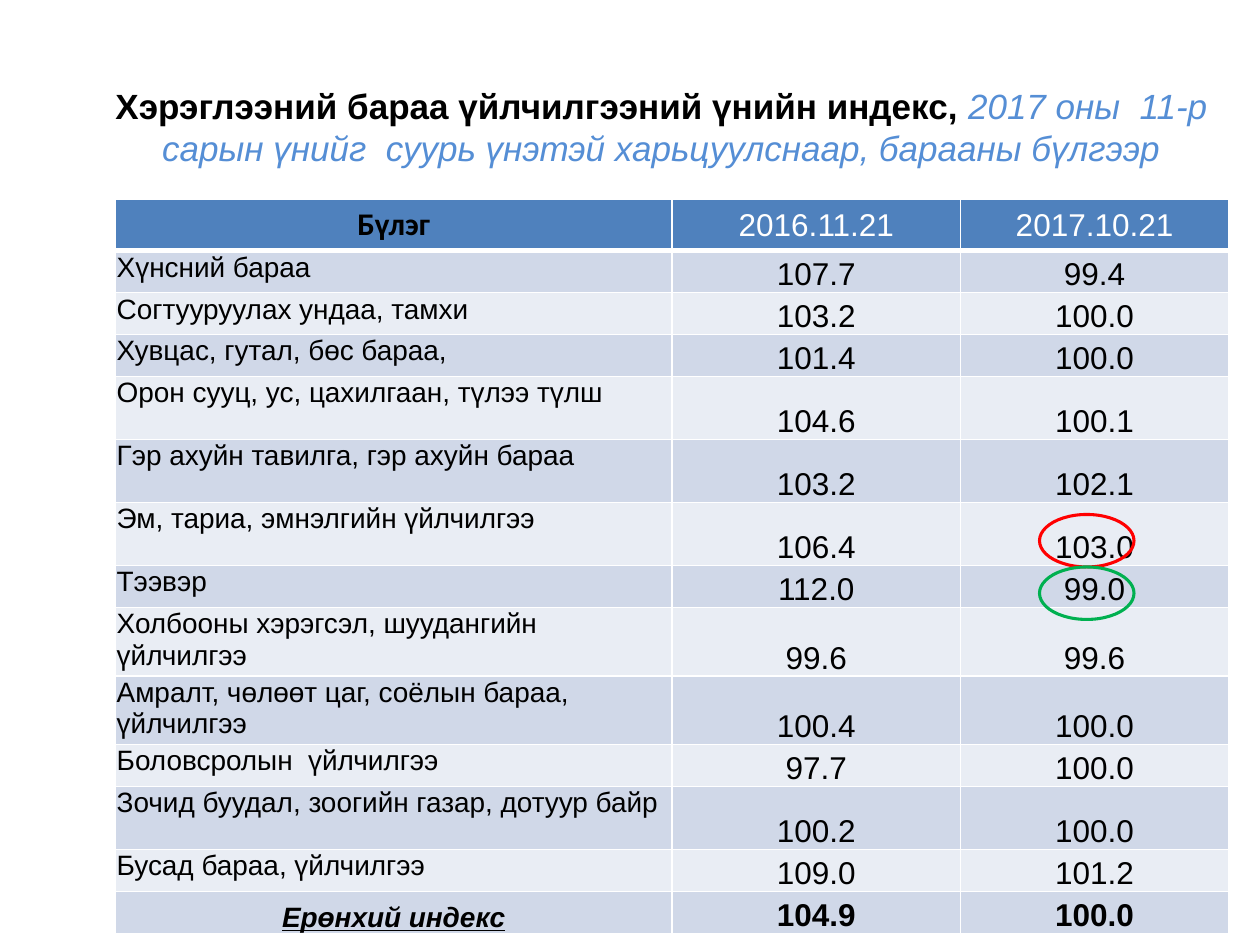
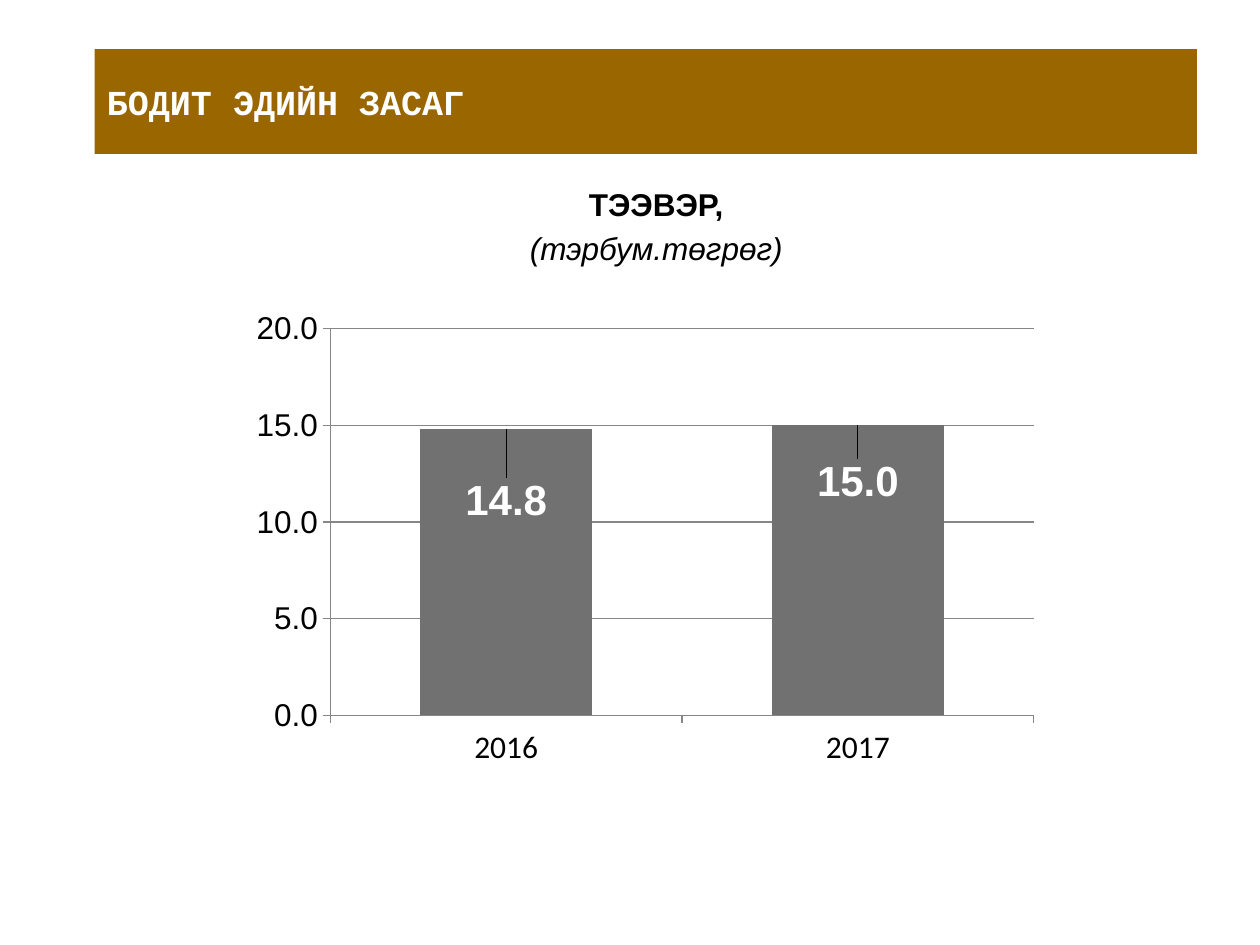
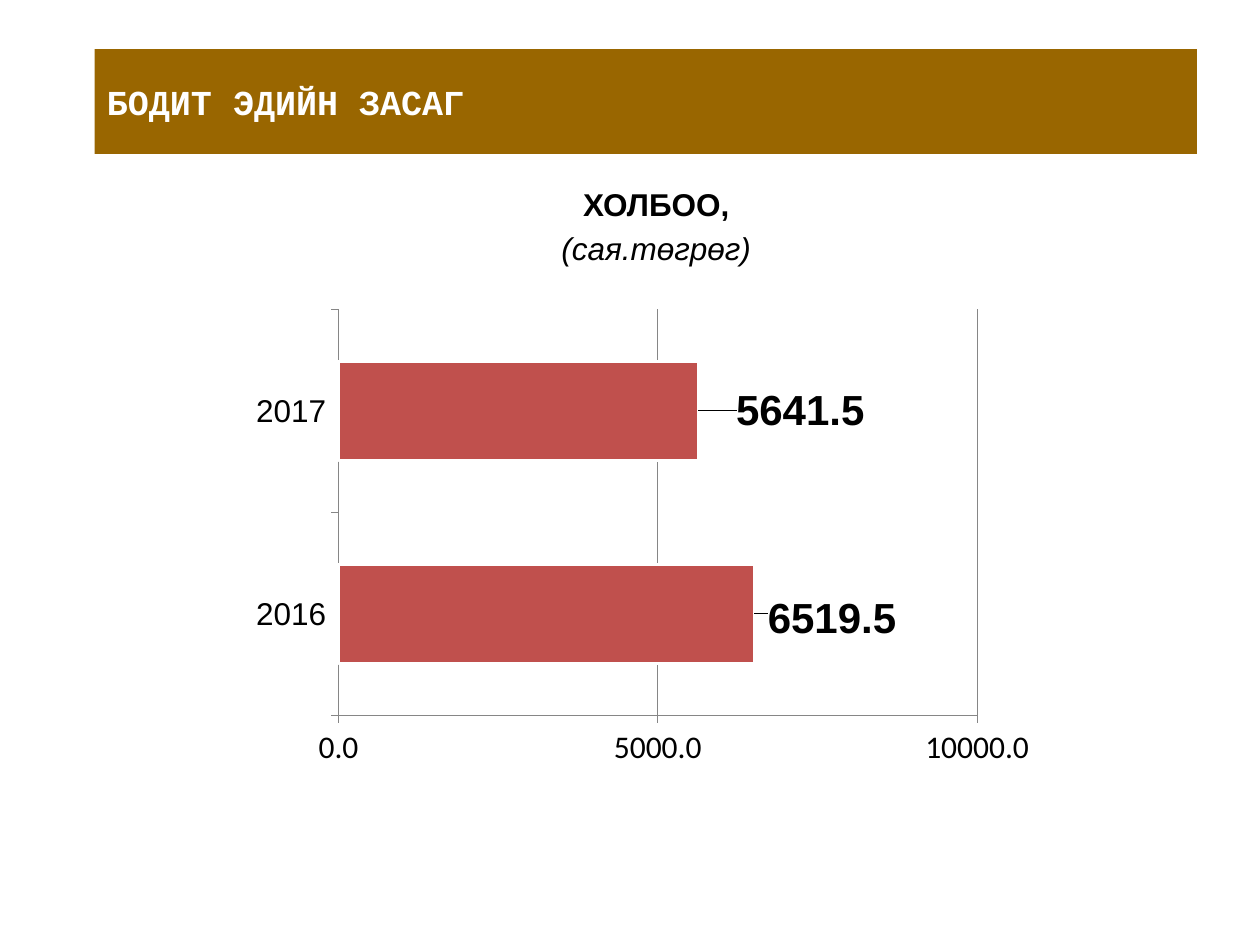
import pptx
import pptx.chart.data
import pptx.dml.color
import pptx.enum.chart
import pptx.enum.shapes
import pptx.enum.text
import pptx.oxml
import pptx.oxml.ns
import pptx.util

Pt = pptx.util.Pt
ALIGN = pptx.enum.text.PP_ALIGN
ANCHOR = pptx.enum.text.MSO_ANCHOR
SHAPE = pptx.enum.shapes.MSO_SHAPE
CHART = pptx.enum.chart.XL_CHART_TYPE
LABEL = pptx.enum.chart.XL_LABEL_POSITION
TICK = pptx.enum.chart.XL_TICK_MARK

BLACK, WHITE = "000000", "FFFFFF"
BAND, ACCENT, AXIS = "996600", "558ED5", "868686"
HEADER, STRIPES = "4F81BD", ("D0D8E8", "E9EDF4")
COLUMN_FILL, BAR_FILL = "717171", "C0504D"
SHORT, TALL = 24, 36

INDEX_HEADER = ("Бүлэг", "2016.11.21", "2017.10.21")
INDEX_ROWS = [
    ("Хүнсний бараа", "107.7", "99.4", SHORT),
    ("Согтууруулах ундаа, тамхи", "103.2", "100.0", SHORT),
    ("Хувцас, гутал, бөс бараа,", "101.4", "100.0", SHORT),
    ("Орон сууц, ус, цахилгаан, түлээ түлш", "104.6", "100.1", TALL),
    ("Гэр ахуйн тавилга, гэр ахуйн бараа", "103.2", "102.1", TALL),
    ("Эм, тариа, эмнэлгийн үйлчилгээ", "106.4", "103.0", TALL),
    ("Тээвэр", "112.0", "99.0", SHORT),
    ("Холбооны хэрэгсэл, шуудангийн үйлчилгээ", "99.6", "99.6", TALL),
    ("Амралт, чөлөөт цаг, соёлын бараа, үйлчилгээ", "100.4", "100.0", TALL),
    ("Боловсролын  үйлчилгээ", "97.7", "100.0", SHORT),
    ("Зочид буудал, зоогийн газар, дотуур байр", "100.2", "100.0", TALL),
    ("Бусад бараа, үйлчилгээ", "109.0", "101.2", SHORT),
    ("Ерөнхий индекс", "104.9", "100.0", SHORT),
]


def color(value):
    return pptx.dml.color.RGBColor.from_string(value)


def paint(fill, value):
    fill.solid()
    fill.fore_color.rgb = color(value)


def parse(xml, prefix):
    tag, rest = xml.split(" ", 1)
    return pptx.oxml.parse_xml(f"{tag} {pptx.oxml.ns.nsdecls(prefix)} {rest}")


def style_font(font, size=18, name="Arial", ink=BLACK, bold=False, italic=False, underline=False):
    font.size = Pt(size)
    font.name = name
    font.color.rgb = color(ink)
    font.bold, font.italic, font.underline = bold, italic, underline


def add_text(paragraph, text, align=ALIGN.CENTER, **style):
    paragraph.alignment = align
    run = paragraph.add_run()
    run.text = text
    style_font(run.font, **style)


def add_text_box(slide, left, top, width, height, anchor=ANCHOR.TOP):
    frame = slide.shapes.add_textbox(Pt(left), Pt(top), Pt(width), Pt(height)).text_frame
    frame.word_wrap = True
    frame.vertical_anchor = anchor
    return frame


def add_shape(slide, kind, left, top, width, height):
    shape = slide.shapes.add_shape(kind, Pt(left), Pt(top), Pt(width), Pt(height))
    shape.shadow.inherit = False
    return shape


def add_ring(slide, top, line):
    ring = add_shape(slide, SHAPE.OVAL, 594, top, 54, 30)
    ring.fill.background()
    ring.line.color.rgb = color(line)
    ring.line.width = Pt(1.75)


def add_band(slide, text):
    band = add_shape(slide, SHAPE.RECTANGLE, 54, 28, 630, 60)
    paint(band.fill, BAND)
    band.line.fill.background()
    band.text_frame.vertical_anchor = ANCHOR.MIDDLE
    add_text(band.text_frame.paragraphs[0], text, ALIGN.LEFT,
             size=20, name="Courier New", ink=WHITE, bold=True)


def add_borders(cell, bottom):
    properties = cell._tc.get_or_add_tcPr()
    for side, width in zip("LRTB", (1, 1, 1, bottom)):
        properties.append(parse(
            f'<a:ln{side} w="{Pt(width)}"><a:solidFill><a:srgbClr val="{WHITE}"/>'
            f'</a:solidFill></a:ln{side}>', "a"))


def fill_cell(cell, text, fill, anchor, margins=(0, 0, 0, 0), align=ALIGN.CENTER,
              bottom=1, **style):
    add_borders(cell, bottom)
    paint(cell.fill, fill)
    cell.vertical_anchor = anchor
    cell.margin_left, cell.margin_top, cell.margin_right, cell.margin_bottom = map(Pt, margins)
    add_text(cell.text_frame.paragraphs[0], text, align, **style)


def add_index_table(slide):
    heights = [29.2] + [row[3] for row in INDEX_ROWS]
    widths = (318, 165, 153)
    table = slide.shapes.add_table(len(heights), len(widths), Pt(66), Pt(114),
                                   Pt(sum(widths)), Pt(sum(heights))).table
    for column, width in zip(table.columns, widths):
        column.width = Pt(width)
    for row, height in zip(table.rows, heights):
        row.height = Pt(height)

    group_title, *dates = INDEX_HEADER
    fill_cell(table.cell(0, 0), group_title, HEADER, ANCHOR.TOP, (7.2, 3.6, 7.2, 3.6),
              bottom=3, name="Calibri", bold=True)
    for column, date in enumerate(dates, start=1):
        fill_cell(table.cell(0, column), date, HEADER, ANCHOR.MIDDLE, bottom=3, ink=WHITE)

    for index, (group, *values, _) in enumerate(INDEX_ROWS, start=1):
        stripe = STRIPES[(index - 1) % 2]
        total = index == len(INDEX_ROWS)
        fill_cell(table.cell(index, 0), group, stripe,
                  ANCHOR.BOTTOM if total else ANCHOR.TOP, (0.72, 0.72, 0.72, 0),
                  ALIGN.CENTER if total else ALIGN.LEFT,
                  size=16, bold=total, italic=total, underline=total)
        for column, value in enumerate(values, start=1):
            fill_cell(table.cell(index, column), value, stripe, ANCHOR.BOTTOM, bold=total)


def place_plot(chart, x, y, width, height):
    plot_area = chart._chartSpace.chart.plotArea
    for layout in plot_area.xpath("c:layout"):
        plot_area.remove(layout)
    plot_area.insert(0, parse(
        '<c:layout ><c:manualLayout><c:layoutTarget val="inner"/>'
        '<c:xMode val="edge"/><c:yMode val="edge"/>'
        f'<c:x val="{x}"/><c:y val="{y}"/><c:w val="{width}"/><c:h val="{height}"/>'
        '</c:manualLayout></c:layout>', "c"))


def style_axis(axis, font_name):
    axis.major_tick_mark = TICK.OUTSIDE
    axis.minor_tick_mark = TICK.NONE
    axis.format.line.color.rgb = color(AXIS)
    style_font(axis.tick_labels.font, name=font_name)


def add_year_chart(slide, kind, values, maximum, step, fill, plot, axis_fonts,
                   label_position, label_ink, label_offsets):
    data = pptx.chart.data.CategoryChartData(number_format="0.0")
    data.categories = ["2016", "2017"]
    data.add_series("Series 1", values)
    chart = slide.shapes.add_chart(kind, Pt(138), Pt(171.4), Pt(462), Pt(273), data).chart
    chart.has_title = False
    chart.has_legend = False
    style_font(chart.font, name="Calibri")
    place_plot(chart, *plot)

    style_axis(chart.category_axis, axis_fonts[0])
    value_axis = chart.value_axis
    style_axis(value_axis, axis_fonts[1])
    value_axis.minimum_scale, value_axis.maximum_scale = 0, maximum
    value_axis.major_unit = step
    value_axis.has_major_gridlines = True
    value_axis.major_gridlines.format.line.color.rgb = color(AXIS)
    value_axis.tick_labels.number_format = "0.0"
    value_axis.tick_labels.number_format_is_linked = False

    bars = chart.plots[0]
    bars.gap_width = 104
    bars.vary_by_categories = False
    series = bars.series[0]
    series.invert_if_negative = False
    paint(series.format.fill, fill)
    for index, (x, y) in enumerate(label_offsets):
        label = series.points[index].data_label
        style_font(label.font, size=24, ink=label_ink, bold=True)
        label.position = label_position
        element = series._element.xpath("c:dLbls/c:dLbl")[index]
        element.insert(1, parse(
            f'<c:layout ><c:manualLayout><c:x val="{x}"/><c:y val="{y}"/>'
            '</c:manualLayout></c:layout>', "c"))
    return series


def add_economy_slide(presentation, heading, unit):
    slide = add_slide(presentation)
    frame = add_text_box(slide, 66, 102, 618, 344)
    add_text(frame.paragraphs[0], heading, bold=True)
    unit_paragraph = frame.add_paragraph()
    unit_paragraph.space_before = Pt(3.6)
    add_text(unit_paragraph, unit, italic=True)
    add_band(slide, "БОДИТ ЭДИЙН ЗАСАГ")
    return slide


def add_slide(presentation):
    return presentation.slides.add_slide(presentation.slide_layouts[6])


def add_index_slide(presentation):
    slide = add_slide(presentation)
    title = add_text_box(slide, 54, 48, 648, 48, ANCHOR.MIDDLE).paragraphs[0]
    add_text(title, "Хэрэглээний бараа үйлчилгээний үнийн индекс, ", size=20, bold=True)
    add_text(title, "2017 оны  11-р сарын үнийг  суурь үнэтэй харьцуулснаар, барааны бүлгээр",
             size=20, ink=ACCENT, italic=True)
    add_index_table(slide)
    add_ring(slide, 294, "FF0000")
    add_ring(slide, 324, "00B050")


def main():
    presentation = pptx.Presentation()
    presentation.slide_width, presentation.slide_height = Pt(720), Pt(540)
    add_index_slide(presentation)

    transport = add_economy_slide(presentation, "ТЭЭВЭР,", "(тэрбум.төгрөг)")
    add_year_chart(transport, CHART.COLUMN_CLUSTERED, (14.8, 15.0), 20, 5, COLUMN_FILL,
                   (0.11, 0.06, 0.87, 0.81), ("Calibri", "Arial"),
                   LABEL.INSIDE_END, WHITE, ((0, 0.09), (0, 0.06)))

    communication = add_economy_slide(presentation, "ХОЛБОО,", "(сая.төгрөг)")
    series = add_year_chart(communication, CHART.BAR_CLUSTERED, (6519.5, 5641.5), 10000, 5000,
                            BAR_FILL, (0.12, 0.02, 0.79, 0.85), ("Arial", "Calibri"),
                            LABEL.OUTSIDE_END, BLACK, ((0.01, 0.01), (0.04, 0)))
    series.format.line.color.rgb = color(WHITE)
    series.format.line.width = Pt(1.5)

    presentation.save("out.pptx")


if __name__ == "__main__":
    main()
